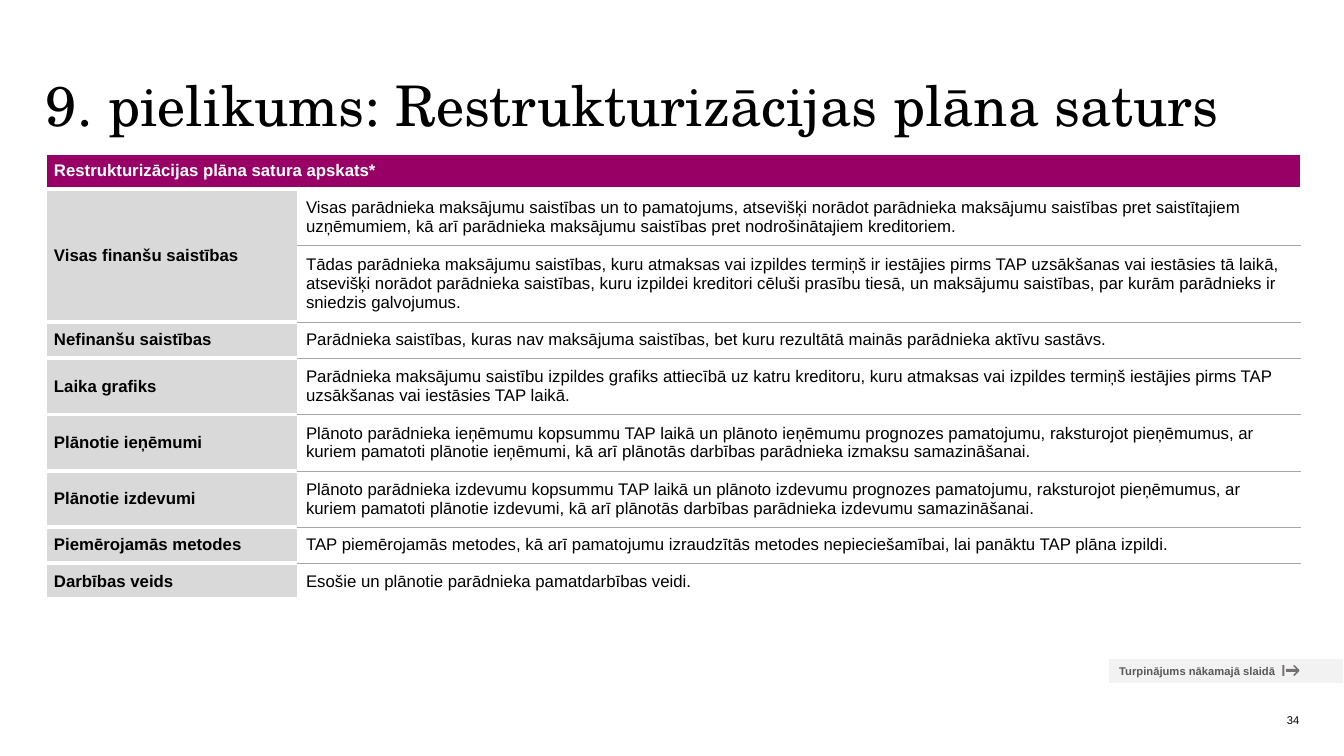
from lxml import etree
from pptx import Presentation
from pptx import util as u
from pptx.dml.color import RGBColor
from pptx.enum import shapes, text
from pptx.oxml.ns import qn

TITLE = "9. pielikums: Restrukturizācijas plāna saturs"
HEADING = "Restrukturizācijas plāna satura apskats*"
CONTINUED = "Turpinājums nākamajā slaidā"
PAGE_NUMBER = "34"

# (label, descriptions), one table row for each description
SECTIONS = [
    ("Visas finanšu saistības", [
        "Visas parādnieka maksājumu saistības un to pamatojums, atsevišķi norādot parādnieka "
        "maksājumu saistības pret saistītajiem uzņēmumiem, kā arī parādnieka maksājumu saistības "
        "pret nodrošinātajiem kreditoriem.",
        "Tādas parādnieka maksājumu saistības, kuru atmaksas vai izpildes termiņš ir iestājies "
        "pirms TAP uzsākšanas vai iestāsies tā laikā, atsevišķi norādot parādnieka saistības, "
        "kuru izpildei kreditori cēluši prasību tiesā, un maksājumu saistības, par kurām "
        "parādnieks ir sniedzis galvojumus."]),
    ("Nefinanšu saistības", [
        "Parādnieka saistības, kuras nav maksājuma saistības, bet kuru rezultātā mainās "
        "parādnieka aktīvu sastāvs."]),
    ("Laika grafiks", [
        "Parādnieka maksājumu saistību izpildes grafiks attiecībā uz katru kreditoru, kuru "
        "atmaksas vai izpildes termiņš iestājies pirms TAP uzsākšanas vai iestāsies TAP laikā."]),
    ("Plānotie ieņēmumi", [
        "Plānoto parādnieka ieņēmumu kopsummu TAP laikā un plānoto ieņēmumu prognozes pamatojumu, "
        "raksturojot pieņēmumus, ar kuriem pamatoti plānotie ieņēmumi, kā arī plānotās darbības "
        "parādnieka izmaksu samazināšanai."]),
    ("Plānotie izdevumi", [
        "Plānoto parādnieka izdevumu kopsummu TAP laikā un plānoto izdevumu prognozes pamatojumu, "
        "raksturojot pieņēmumus, ar kuriem pamatoti plānotie izdevumi, kā arī plānotās darbības "
        "parādnieka izdevumu samazināšanai."]),
    ("Piemērojamās metodes", [
        "TAP piemērojamās metodes, kā arī pamatojumu izraudzītās metodes nepieciešamībai, lai "
        "panāktu TAP plāna izpildi."]),
    ("Darbības veids", ["Esošie un plānotie parādnieka pamatdarbības veidi."]),
]

COLORS = {"black": "000000", "white": "FFFFFF", "header": "990066", "label": "D9D9D9",
          "rule": "A6A6A6", "tag": "F2F2F2", "tag_text": "595959", "arrow": "767171"}
HEADING_FONT, BODY_FONT = "TeX Gyre Schola", "Arial"

PX = 914400 / 100.8
TABLE_LEFT, TABLE_TOP = 46, 153
COLUMN_WIDTHS = [252, 1002]
ROW_HEIGHTS = [35, 53, 72, 35, 54, 53, 54, 35, 34]
ARROW = [(1293, 666), (1294, 665), (1299, 670), (1299, 671), (1294, 676), (1293, 675),
         (1296, 672), (1286, 672), (1286, 669), (1296, 669)]
ARROW_BAR = [(1282, 665), (1284, 665), (1284, 676), (1282, 676)]


def px(*lengths):
    return [u.Emu(round(length * PX)) for length in lengths]


def rgb(name):
    return RGBColor.from_string(COLORS[name])


def write(frame, words, size, color, bold=False, font=BODY_FONT):
    """Fill a text frame or table cell's frame with one paragraph."""
    para = frame.paragraphs[0]
    para.text = words
    para.font.size, para.font.bold, para.font.name = u.Pt(size), bold, font
    para.font.color.rgb = rgb(color)
    return para


def add_text(page, bounds, words, size, font):
    frame = page.shapes.add_textbox(*px(*bounds)).text_frame
    frame.word_wrap = True
    frame.margin_left = frame.margin_top = frame.margin_right = frame.margin_bottom = 0
    frame.vertical_anchor = text.MSO_ANCHOR.MIDDLE
    return write(frame, words, size, "black", font=font)


def set_borders(cell, top, bottom):
    """Draw the top and bottom borders, each given as (colour name, points)."""
    properties = cell._tc.get_or_add_tcPr()
    for place, (tag, (color, points)) in enumerate((("a:lnT", top), ("a:lnB", bottom))):
        line = etree.Element(qn(tag), w=str(u.Pt(points)))
        fill = etree.SubElement(line, qn("a:solidFill"))
        etree.SubElement(fill, qn("a:srgbClr"), val=COLORS[color])
        properties.insert(place, line)


def fill_cell(cell, words, color, bold, fill, top, bottom, right=4):
    cell.margin_left, cell.margin_top, cell.margin_right, cell.margin_bottom = px(8, 8, right, 8)
    cell.vertical_anchor = text.MSO_ANCHOR.MIDDLE
    write(cell.text_frame, words, 12, color, bold)
    if fill:
        cell.fill.solid()
        cell.fill.fore_color.rgb = rgb(fill)
    else:
        cell.fill.background()
    set_borders(cell, top, bottom)


def add_table(page):
    bounds = px(TABLE_LEFT, TABLE_TOP, sum(COLUMN_WIDTHS), sum(ROW_HEIGHTS))
    table = page.shapes.add_table(len(ROW_HEIGHTS), len(COLUMN_WIDTHS), *bounds).table
    table.first_row = table.horz_banding = False
    for column, width in zip(table.columns, px(*COLUMN_WIDTHS)):
        column.width = width
    for row, height in zip(table.rows, px(*ROW_HEIGHTS)):
        row.height = height

    gap, rule = ("white", 3), ("rule", 0.25)
    for column, words in enumerate((HEADING, "")):
        fill_cell(table.cell(0, column), words, "white", True, "header", gap, gap, right=8)
    table.cell(0, 0).merge(table.cell(0, 1))

    row, last = 1, len(ROW_HEIGHTS) - 1
    for label, descriptions in SECTIONS:
        first = row
        for description in descriptions:
            fill_cell(table.cell(row, 0), label if row == first else "", "black", True,
                      "label", gap, gap)
            fill_cell(table.cell(row, 1), description, "black", False, None,
                      gap if row == 1 else rule, gap if row == last else rule)
            row += 1
        if len(descriptions) > 1:
            table.cell(first, 0).merge(table.cell(row - 1, 0))


def paint(shape, color):
    shape.shadow.inherit = False
    shape.fill.solid()
    shape.fill.fore_color.rgb = rgb(color)
    shape.line.fill.background()


def add_continued_tag(page):
    tag = page.shapes.add_shape(shapes.MSO_SHAPE.RECTANGLE, *px(1109, 659, 234, 24))
    paint(tag, "tag")
    tag.text_frame.vertical_anchor = text.MSO_ANCHOR.MIDDLE
    para = write(tag.text_frame, CONTINUED, 8, "tag_text", bold=True)
    para.alignment = text.PP_ALIGN.LEFT

    outline = page.shapes.build_freeform(*ARROW[0], scale=PX)
    outline.add_line_segments(ARROW[1:])
    outline.move_to(*ARROW_BAR[0])
    outline.add_line_segments(ARROW_BAR[1:])
    paint(outline.convert_to_shape(), "arrow")


def main():
    deck = Presentation()
    deck.slide_width, deck.slide_height = u.Inches(13.33), u.Inches(7.5)
    page = deck.slides.add_slide(deck.slide_layouts[6])
    number = add_text(page, (997, 714, 302, 13), PAGE_NUMBER, 8, BODY_FONT)
    number.alignment = text.PP_ALIGN.RIGHT
    title = add_text(page, (46, 36, 1253, 145), TITLE, 40, HEADING_FONT)
    title.line_spacing = 0.9
    add_table(page)
    add_continued_tag(page)
    deck.save("out.pptx")


if __name__ == "__main__":
    main()
